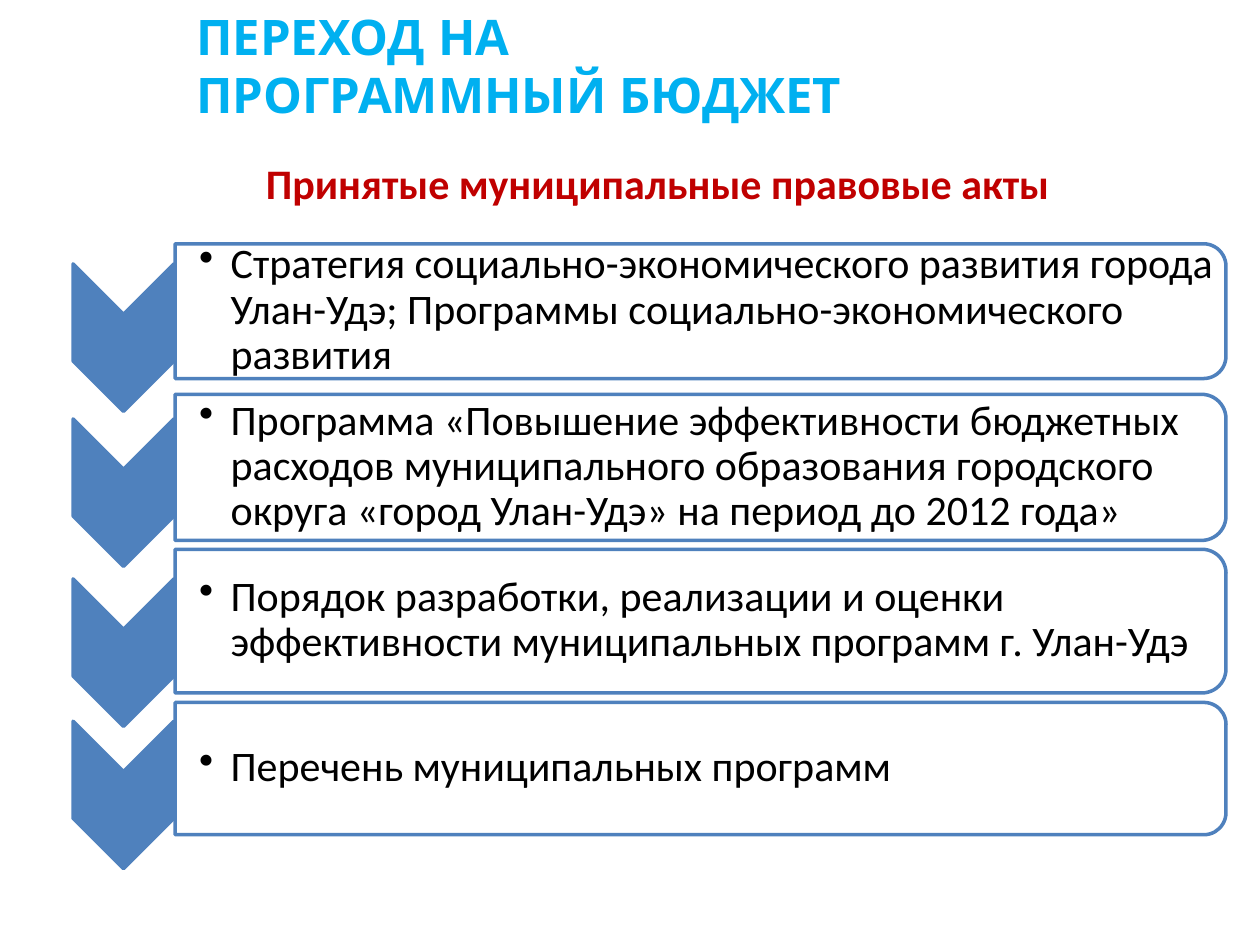
import pptx
import pptx.util
import pptx.dml.color
import pptx.enum.shapes
import pptx.enum.text
import pptx.oxml.ns
import lxml.etree

Inches = pptx.util.Inches
Points = pptx.util.Pt
Kind = pptx.enum.shapes.MSO_SHAPE
Align = pptx.enum.text.PP_ALIGN
Anchor = pptx.enum.text.MSO_ANCHOR
qn = pptx.oxml.ns.qn

COLORS = {"blue": "4F81BD", "white": "FFFFFF", "black": "000000", "red": "C00000", "sky": "00B0F0"}
ACTS = [
    ("Стратегия социально-экономического развития города Улан-Удэ; Программы социально-экономического развития", 2.68, 2.47, 1.07),
    ("Программа «Повышение эффективности бюджетных расходов муниципального образования городского округа «город Улан-Удэ» на период до 2012 года»", 3.91, 3.71, 1.16),
    ("Порядок разработки, реализации и оценки эффективности муниципальных программ г. Улан-Удэ", 5.18, 4.93, 1.14),
    ("Перечень муниципальных программ", 6.31, 6.1, 1.05),
]


def add_turned_shape(page, kind, center_x, center_y, width, height, fill):
    shape = page.shapes.add_shape(
        kind, Inches(center_x - width / 2), Inches(center_y - height / 2), Inches(width), Inches(height))
    shape.rotation = 90
    shape.shadow.inherit = False
    shape.fill.solid()
    shape.fill.fore_color.rgb = pptx.dml.color.RGBColor.from_string(COLORS[fill])
    shape.line.color.rgb = pptx.dml.color.RGBColor.from_string(COLORS["blue"])
    shape.line.width = Points(2)
    return shape


def add_text(page, place, lines, frame_format, font_format, color, align=Align.LEFT, bullet=False):
    box = page.shapes.add_textbox(*[Inches(value) for value in place])
    frame = box.text_frame
    for name, value in {"word_wrap": True, **frame_format}.items():
        setattr(frame, name, value)
    for index, line in enumerate(lines):
        para = frame.add_paragraph() if index else frame.paragraphs[0]
        para.alignment = align
        if bullet:
            para.line_spacing = 0.9
            properties = para._p.get_or_add_pPr()
            properties.set("marL", str(Inches(0.25)))
            properties.set("indent", str(Inches(-0.25)))
            lxml.etree.SubElement(properties, qn("a:buChar"), char="•")
        span = para.add_run()
        span.text = line
        for name, value in font_format.items():
            setattr(span.font, name, value)
        span.font.color.rgb = pptx.dml.color.RGBColor.from_string(COLORS[color])


deck = pptx.Presentation()
deck.slide_width = Inches(10)
deck.slide_height = Inches(7.5)
page = deck.slides.add_slide(deck.slide_layouts[6])

body_font = {"name": "Calibri", "size": Points(24)}
act_frame = {
    "vertical_anchor": Anchor.MIDDLE,
    "margin_left": Inches(0.19),
    "margin_top": Inches(0.02),
    "margin_right": Inches(0.02),
    "margin_bottom": Inches(0.02),
}

for act, chevron_y, panel_y, panel_height in ACTS:
    add_turned_shape(page, Kind.CHEVRON, 0.98, chevron_y, 1.17, 0.8, "blue")
    panel = add_turned_shape(page, Kind.ROUND_2_SAME_RECTANGLE, 5.56, panel_y, panel_height, 8.34, "white")
    panel_color = panel._element.spPr.find(qn("a:solidFill"))[0]
    lxml.etree.SubElement(panel_color, qn("a:alpha"), val="90000")
    place = (1.39, panel_y - panel_height / 2 + 0.05, 8.29, panel_height - 0.11)
    add_text(page, place, [act], act_frame, body_font, "black", bullet=True)

add_text(page, (0.67, 1.2, 9.1, 0.5), ["Принятые муниципальные правовые акты"],
         {"vertical_anchor": Anchor.MIDDLE}, {**body_font, "bold": True}, "red", Align.CENTER)
add_text(page, (1.46, 0, 7.17, 1.04), ["ПЕРЕХОД НА", "ПРОГРАММНЫЙ БЮДЖЕТ"],
         {"vertical_anchor": Anchor.TOP},
         {"name": "League Spartan", "size": Points(28), "bold": True}, "sky")

deck.save("out.pptx")
